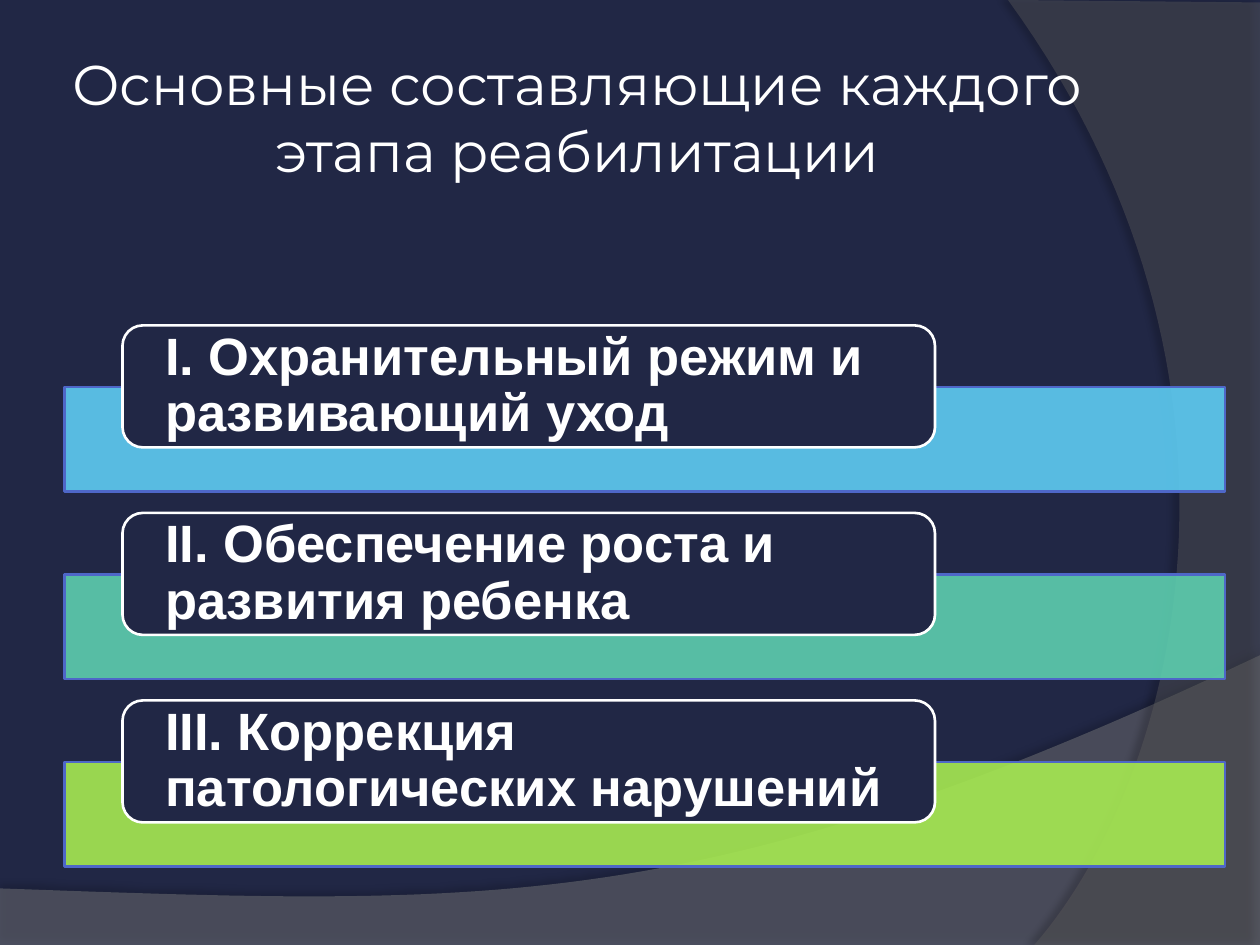
from lxml import etree
from pptx import Presentation
from pptx.dml.color import RGBColor
from pptx.enum import shapes, text
from pptx.oxml import ns
from pptx.util import Cm, Pt

NAVY = RGBColor(0x21, 0x27, 0x45)
WHITE = RGBColor(0xFF, 0xFF, 0xFF)
EDGE = RGBColor(0x4E, 0x67, 0xC8)
BLUE = RGBColor(0x5E, 0xCC, 0xF3)
TEAL = RGBColor(0x5D, 0xCE, 0xAF)
LIME = RGBColor(0xA7, 0xEA, 0x52)
GREY = RGBColor(0x7F, 0x7F, 0x7F)
DARK = RGBColor(0x5E, 0x5E, 0x5E)
KIND = shapes.MSO_SHAPE

STAGES = [
    ("I. Охранительный режим и развивающий уход", BLUE),
    ("II. Обеспечение роста и развития ребенка", TEAL),
    ("III. Коррекция патологических нарушений", LIME),
]


def sub(node, tag, **attrs):
    return etree.SubElement(node, ns.qn(tag), **{k: str(v) for k, v in attrs.items()})


def paint(shape, color, alpha=100):
    """Solid fill without shadow; alpha is the opacity in percent."""
    shape.shadow.inherit = False
    shape.fill.solid()
    shape.fill.fore_color.rgb = color
    if alpha < 100:
        node = shape._element.spPr.find(".//" + ns.qn("a:srgbClr"))
        sub(node, "a:alpha", val=alpha * 1000)


def outline(shape, color):
    shape.line.color.rgb = color
    shape.line.width = Pt(1.5)


def cast(shape, alpha, dist, angle):
    """Soft black shadow."""
    effects = shape._element.spPr.find(ns.qn("a:effectLst"))
    shade = sub(effects, "a:outerShdw", blurRad=Pt(4), dist=Pt(dist),
                dir=angle * 60000, algn="ctr", rotWithShape=0)
    color = sub(shade, "a:srgbClr", val="000000")
    sub(color, "a:alpha", val=alpha * 1000)


def bezier(a, b, c, d, steps=60):
    """Points after a on a cubic curve from a to d."""
    for i in range(1, steps + 1):
        t = i / steps
        s = 1 - t
        yield tuple(s**3 * p + 3 * s * s * t * q + 3 * s * t * t * r + t**3 * e
                    for p, q, r, e in zip(a, b, c, d))


def swoosh(slide, corners, curve, color, alpha):
    """Straight corners, then a curve from the last of them."""
    points = corners + list(bezier(corners[-1], *curve))
    points = [(Cm(x), Cm(y)) for x, y in points]
    build = slide.shapes.build_freeform(*points[0])
    build.add_line_segments(points[1:], close=True)
    shape = build.convert_to_shape()
    paint(shape, color, alpha)
    shape.line.fill.background()
    return shape


def backdrop(slide, wide, high):
    slide.background.fill.solid()
    slide.background.fill.fore_color.rgb = NAVY
    # Wave along the bottom
    wave = swoosh(slide, [(0, 17.91), (0, high), (wide, high), (wide, 13.21)],
                  [(14.2, 18.52), (9.93, 18.26), (0, 17.91)], GREY, 45)
    cast(wave, 35, 3.5, 270)
    # Arc down the right side
    arc = swoosh(slide, [(wide, 0.05), (wide, high), (20.85, high)],
                 [(23.75, 15.72), (25.86, 7.62), (20.32, 0)], DARK, 40)
    cast(arc, 45, 4, 180)


def write(shape, words, font, size, inset):
    frame = shape.text_frame
    frame.word_wrap = True
    frame.vertical_anchor = text.MSO_ANCHOR.MIDDLE
    frame.margin_left = frame.margin_right = Cm(inset)
    para = frame.paragraphs[0]
    para.text = words
    para.font.name = font
    para.font.size = Pt(size)
    para.font.color.rgb = WHITE
    return para


def title(slide, left, top, wide, high):
    box = slide.shapes.add_textbox(Cm(left), Cm(top), Cm(wide), Cm(high))
    para = write(box, "Основные составляющие каждого этапа реабилитации",
                 "Montserrat", 32, 0.13)
    para.alignment = text.PP_ALIGN.CENTER


def stage(slide, left, top, wide, words, color):
    # Bar behind the label
    bar = slide.shapes.add_shape(KIND.RECTANGLE, Cm(left), Cm(top + 1.24),
                                 Cm(wide), Cm(2.11))
    paint(bar, color, 90)
    outline(bar, EDGE)
    # Label, 70 % of the bar's width
    label = slide.shapes.add_shape(KIND.ROUNDED_RECTANGLE, Cm(left + 1.17), Cm(top),
                                   Cm(wide * 0.7), Cm(2.46))
    paint(label, NAVY)
    outline(label, WHITE)
    para = write(label, words, "Arial", 30, 0.74)
    label.text_frame.margin_top = label.text_frame.margin_bottom = 0
    para.font.bold = True
    para.alignment = text.PP_ALIGN.LEFT
    para.line_spacing = 0.9


def stages(slide, left, top, wide, step):
    for i, (words, color) in enumerate(STAGES):
        stage(slide, left, top + i * step, wide, words, color)


def main():
    deck = Presentation()
    wide, high = 25.4, 19.05
    deck.slide_width, deck.slide_height = Cm(wide), Cm(high)
    slide = deck.slides.add_slide(deck.slide_layouts[6])
    backdrop(slide, wide, high)
    title(slide, 1.27, 0.76, 20.75, 3.18)
    stages(slide, 1.3, 6.56, 23.4, 3.78)
    deck.save("out.pptx")


if __name__ == "__main__":
    main()
